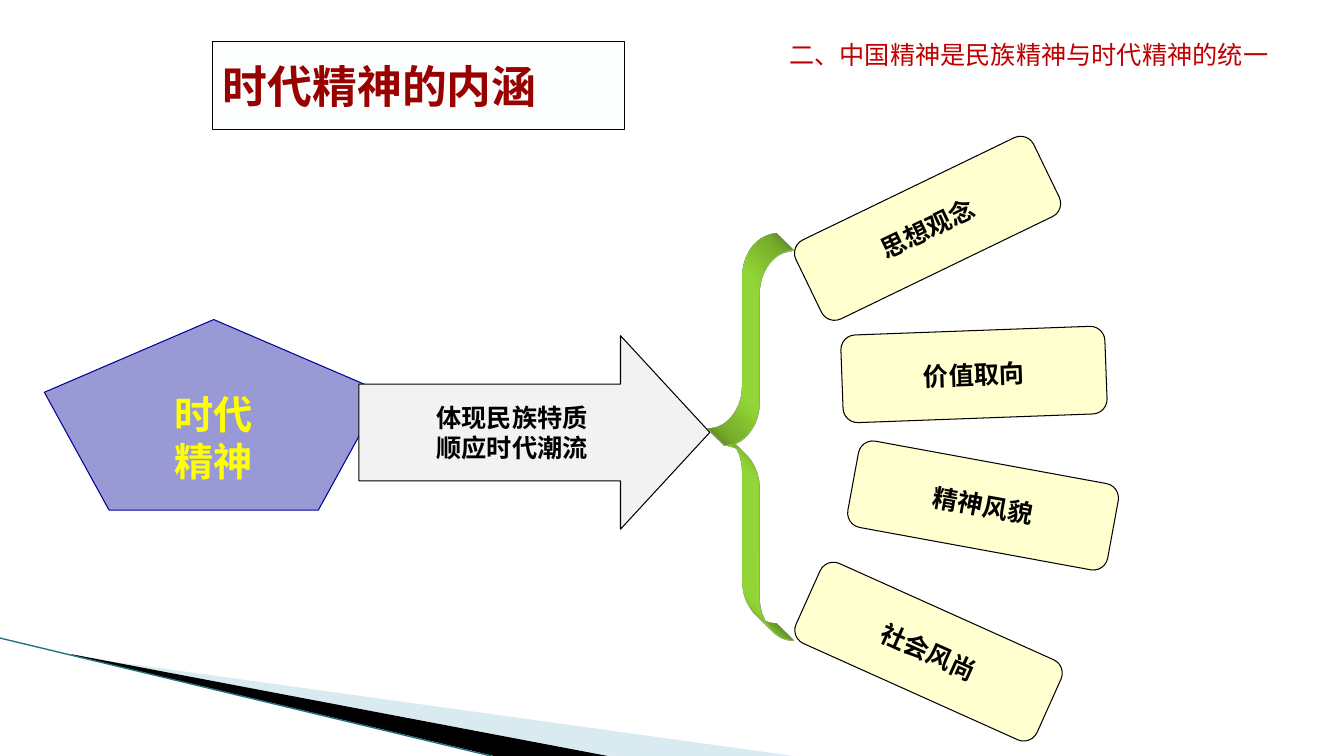
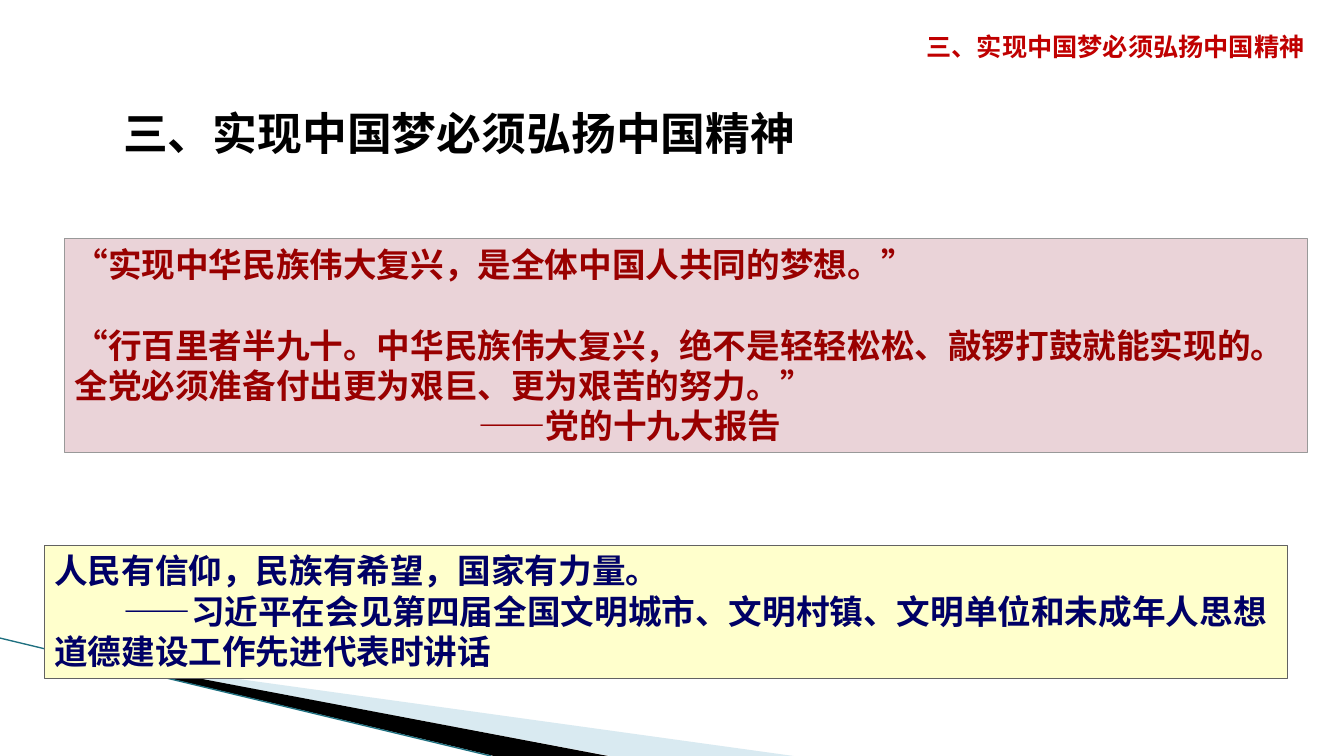
import pptx
import pptx.util
import pptx.dml.color
import pptx.enum.shapes
import pptx.enum.text
import pptx.oxml
import pptx.oxml.ns

Inches = pptx.util.Inches
Pt = pptx.util.Pt
RGBColor = pptx.dml.color.RGBColor
SHAPE = pptx.enum.shapes.MSO_SHAPE
ALIGN = pptx.enum.text.PP_ALIGN
ANCHOR = pptx.enum.text.MSO_ANCHOR

BLACK = RGBColor(0x00, 0x00, 0x00)
MAROON = RGBColor(0x99, 0x00, 0x00)
RED = RGBColor(0xC0, 0x00, 0x00)
NAVY = RGBColor(0x00, 0x00, 0x66)
BLUE = RGBColor(0x00, 0x00, 0x99)
YELLOW = RGBColor(0xFF, 0xFF, 0x00)
CREAM = RGBColor(0xFF, 0xFF, 0x99)
LEMON = RGBColor(0xFF, 0xFF, 0xCC)
PINK = RGBColor(0xEA, 0xD3, 0xD8)
WHITE = RGBColor(0xFC, 0xFE, 0xFE)
PALE = RGBColor(0xF2, 0xF2, 0xF2)
GREY = RGBColor(0x99, 0x99, 0x99)
SLATE = RGBColor(0x62, 0x62, 0x62)
SKY = RGBColor(0xA0, 0xCB, 0xDC)
TEAL = RGBColor(0x1F, 0x70, 0x80)
LIME = RGBColor(0xA7, 0xF5, 0x3F)
HAN = "Noto Sans CJK SC"
LATIN = "Montserrat"
SPACE = pptx.oxml.ns.nsdecls("a")


def write(shape, lines, size, color, font=HAN, bold=True, align=ALIGN.LEFT,
          anchor=ANCHOR.TOP, wrap=True):
    """Fill a shape with paragraphs of one style."""
    frame = shape.text_frame
    frame.auto_size = pptx.enum.text.MSO_AUTO_SIZE.NONE
    frame.word_wrap = wrap
    frame.vertical_anchor = anchor
    frame.text = "\n".join(lines)
    for para in frame.paragraphs:
        para.alignment = align
        para.line_spacing = Pt(size * 1.2)
        para.space_before = Pt(0)
        para.font.size = Pt(size)
        para.font.bold = bold
        para.font.color.rgb = color
        for run in para.runs:
            run.font.name = font
            run.font._element.append(pptx.oxml.parse_xml(
                f'<a:ea {SPACE} typeface="{HAN}"/>'))
    return frame


def draw(slide, kind, box, fill, line, alpha=100):
    """Add a flat shape; kind is a preset, or None for an outline of points."""
    if kind is None:
        spots = [(Inches(x), Inches(y)) for x, y in box]
        form = slide.shapes.build_freeform(*spots[0], scale=1.0)
        form.add_line_segments(spots[1:], close=True)
        shape = form.convert_to_shape()
    else:
        shape = slide.shapes.add_shape(kind, *[Inches(v) for v in box])
    if fill is None:
        shape.fill.background()
    else:
        shape.fill.solid()
        shape.fill.fore_color.rgb = fill
        if alpha < 100:
            tint = shape.element.spPr.find(".//" + pptx.oxml.ns.qn("a:srgbClr"))
            tint.append(pptx.oxml.parse_xml(
                f'<a:alpha {SPACE} val="{alpha * 1000}"/>'))
    if line is None:
        shape.line.fill.background()
    else:
        shape.line.color.rgb = line
        shape.line.width = Pt(0.75)
    shape.shadow.inherit = False
    return shape


deck = pptx.Presentation()
deck.slide_width = Inches(13.33)
deck.slide_height = Inches(7.5)
layout = deck.slide_layouts[5]
first = deck.slides.add_slide(layout)
second = deck.slides.add_slide(layout)

# Shared corner wedges, moved to the layout
sky = draw(first, None, [(0.73, 6.51), (7.87, 7.5), (6.05, 7.5), (0.73, 6.5)],
           SKY, None, 40)
dark = draw(first, None, [(0.71, 6.49), (6.03, 7.5), (4.9, 7.5), (0.72, 6.5)],
            BLACK, None)
edge = first.shapes.add_connector(
    pptx.enum.shapes.MSO_CONNECTOR.STRAIGHT,
    Inches(0), Inches(6.33), Inches(4.87), Inches(7.5))
edge.line.color.rgb = TEAL
edge.line.width = Pt(0.95)
edge.element.spPr.append(pptx.oxml.parse_xml(f"<a:effectLst {SPACE}/>"))
for part in (sky, dark, edge):
    layout.shapes.element.append(part.element)

# Titles
for slide, text, box, color, anchor in (
        (first, "时代精神的内涵", (2.11, 0.41, 4.08, 0.88), MAROON, ANCHOR.MIDDLE),
        (second, "三、实现中国梦必须弘扬中国精神", (1.12, 0.94, 7.22, 0.69),
         BLACK, ANCHOR.BOTTOM)):
    title = slide.shapes.title
    title.left, title.top, title.width, title.height = [Inches(v) for v in box]
    write(title, [text], 32, color, anchor=anchor)
title = first.shapes.title
title.fill.solid()
title.fill.fore_color.rgb = WHITE
title.line.color.rgb = BLACK
title.line.width = Pt(0.75)

# Running heads
for slide, text, box, bold in (
        (first, "二、中国精神是民族精神与时代精神的统一", (7.73, 0.34, 5.22, 0.4), False),
        (second, "三、实现中国梦必须弘扬中国精神", (9.09, 0.26, 3.99, 0.4), True)):
    head = slide.shapes.add_textbox(*[Inches(v) for v in box])
    write(head, [text], 18, RED, bold=bold, wrap=not bold)

# Slide 1: pentagon and arrow
core = draw(first, SHAPE.REGULAR_PENTAGON, (0.44, 3.17, 3.36, 1.89), BLUE, BLUE, 40)
write(core, ["时代", "精神"], 28, YELLOW, align=ALIGN.CENTER,
      anchor=ANCHOR.MIDDLE, wrap=False)
arrow = draw(first, SHAPE.RIGHT_ARROW, (3.56, 3.33, 3.48, 1.92), PALE, BLACK)
arrow.adjustments[0] = 0.5
arrow.adjustments[1] = 0.461
write(arrow, ["体现民族特质", "顺应时代潮流"], 18, BLACK, LATIN,
      align=ALIGN.CENTER, anchor=ANCHOR.MIDDLE, wrap=False)

# Slide 1: brace, extruded up and left into a ribbon
brace = draw(first, SHAPE.LEFT_BRACE, (7.19, 2.49, 0.68, 3.86), None, LIME)
brace.adjustments[0] = 0.634
brace.adjustments[1] = 0.5
for xml in (
        f'<a:scene3d {SPACE}><a:camera prst="legacyObliqueTopLeft"/>'
        '<a:lightRig rig="legacyFlat3" dir="b"/></a:scene3d>',
        f'<a:sp3d {SPACE} extrusionH="430200" prstMaterial="legacyMatte">'
        f'<a:extrusionClr><a:srgbClr val="{LIME}"/></a:extrusionClr></a:sp3d>'):
    brace.element.spPr.append(pptx.oxml.parse_xml(xml))

# Slide 1: fanned cards
for text, left, top, turn in (
        ("思想观念", 7.89, 1.83, 334.2), ("价值取向", 8.35, 3.28, 357.9),
        ("精神风貌", 8.44, 4.58, 10.4), ("社会风尚", 7.9, 6.03, 24.2)):
    card = draw(first, SHAPE.ROUNDED_RECTANGLE, (left, top, 2.62, 0.87),
                CREAM, BLACK, 46)
    card.rotation = turn
    write(card, [text], 18, BLACK, LATIN, align=ALIGN.CENTER,
          anchor=ANCHOR.MIDDLE, wrap=False)

# Slide 2: quotations
for box, fill, line, color, lines, dent in (
        ((0.64, 2.37, 12.33, 2.12), PINK, GREY, MAROON,
         ["“实现中华民族伟大复兴，是全体中国人共同的梦想。”",
          "“行百里者半九十。中华民族伟大复兴，绝不是轻轻松松、敲锣打鼓就能实现的。"
          "全党必须准备付出更为艰巨、更为艰苦的努力。”",
          "——党的十九大报告"], 4.01),
        ((0.44, 5.41, 12.33, 1.32), LEMON, SLATE, NAVY,
         ["人民有信仰，民族有希望，国家有力量。",
          "——习近平在会见第四届全国文明城市、文明村镇、文明单位和未成年人思想"
          "道德建设工作先进代表时讲话"], 0.69)):
    quote = draw(second, SHAPE.RECTANGLE, box, fill, line)
    paras = write(quote, lines, 24, color).paragraphs
    paras[-1]._p.get_or_add_pPr().set("indent", str(Inches(dent)))
    if len(paras) > 2:
        paras[1].space_before = Pt(28.8)

deck.save("out.pptx")
